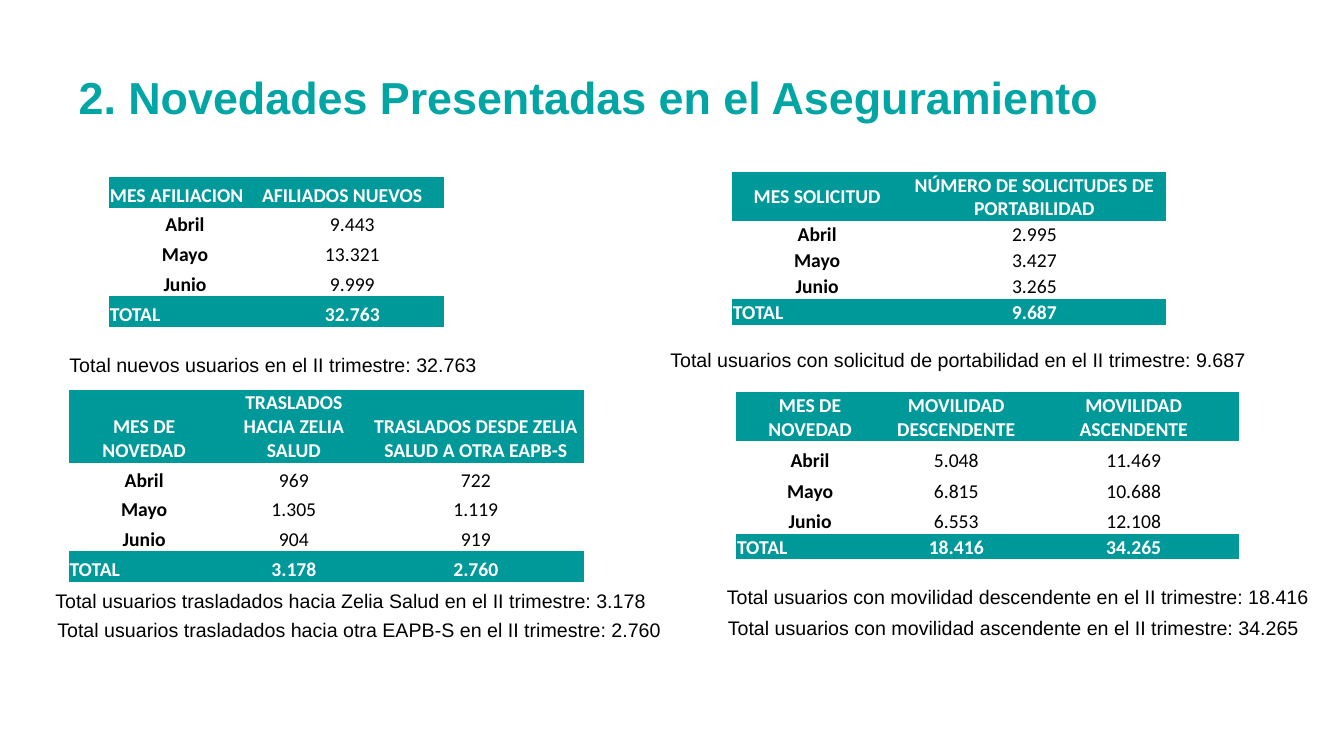
from pptx import Presentation
from pptx.dml.color import RGBColor
from pptx.enum.text import MSO_ANCHOR, MSO_AUTO_SIZE, PP_ALIGN
from pptx.oxml.ns import qn

PX = 9144  # 100 px per inch
SLIDE_WIDTH, SLIDE_HEIGHT = 1333, 750
LEFT, CENTER = PP_ALIGN.LEFT, PP_ALIGN.CENTER
BOTTOM, MIDDLE = MSO_ANCHOR.BOTTOM, MSO_ANCHOR.MIDDLE
NO_AUTOFIT = MSO_AUTO_SIZE.NONE
NO_STYLE_NO_GRID = "{2D5ABB26-0587-4C30-8999-92F81FD0307C}"
COLORS = {"title": "00A5A4", "band": "009999", "light": "FFFFFF", "dark": "000000"}
MONTHS = ["Abril", "Mayo", "Junio"]

# box, column widths, header and total heights, header anchor and alignment,
# header texts, then one list of month values and total for each number column
TABLES = [
    ((108, 176, 332, 148), [151, 181], 30, 30, BOTTOM, LEFT,
     ["MES AFILIACION", "AFILIADOS NUEVOS"],
     [["9.443", "13.321", "9.999", "32.763"]]),
    ((726, 171, 431, 151), [169, 262], 48, 26, MIDDLE, CENTER,
     ["MES SOLICITUD", "NÚMERO DE SOLICITUDES DE PORTABILIDAD"],
     [["2.995", "3.427", "3.265", "9.687"]]),
    ((68, 387, 511, 189), [150, 147, 214], 71, 30, BOTTOM, CENTER,
     ["MES DE NOVEDAD", "TRASLADOS HACIA ZELIA SALUD",
      "TRASLADOS DESDE ZELIA SALUD A OTRA EAPB-S"],
     [["969", "1.305", "904", "3.178"], ["722", "1.119", "919", "2.760"]]),
    ((730, 389, 499, 166), [147, 143, 209], 49, 25, BOTTOM, CENTER,
     ["MES DE NOVEDAD", "MOVILIDAD DESCENDENTE", "MOVILIDAD ASCENDENTE"],
     [["5.048", "6.815", "6.553", "18.416"], ["11.469", "10.688", "12.108", "34.265"]]),
]

CAPTIONS = [
    (59, 345, "Total nuevos usuarios en el II trimestre: 32.763"),
    (655, 340, "Total usuarios con solicitud de portabilidad en el II trimestre: 9.687"),
    (45, 579, "Total usuarios trasladados hacia Zelia Salud en el II trimestre: 3.178"),
    (47, 608, "Total usuarios trasladados hacia otra EAPB-S en el II trimestre: 2.760"),
    (711, 575, "Total usuarios con movilidad descendente en el II trimestre: 18.416"),
    (712, 606, "Total usuarios con movilidad ascendente en el II trimestre: 34.265"),
]


def emu(*lengths):
    return [round(length * PX) for length in lengths]


def write(text_frame, text, size, font_name, color, bold=False, alignment=LEFT):
    text_frame.text = text
    paragraph = text_frame.paragraphs[0]
    paragraph.alignment = alignment
    font = paragraph.runs[0].font
    font.size = size * 12700
    font.name = font_name
    font.bold = bold
    font.color.rgb = RGBColor.from_string(COLORS[color])


def set_title(slide, text):
    title = slide.shapes.title
    title.left, title.top, title.width, title.height = emu(68, 64, 1213, 64)
    title.text_frame.auto_size = NO_AUTOFIT
    write(title.text_frame, text, 32, "Arial", "title", bold=True)


def add_caption(slide, left, top, text):
    width = min(676, SLIDE_WIDTH - left)
    caption = slide.shapes.add_textbox(*emu(left, top, width, 34))
    caption.text_frame.word_wrap = True
    write(caption.text_frame, text, 14, "Arial", "dark")


def fill_cell(cell, text, banded, bold, alignment, anchor):
    cell.margin_left, cell.margin_top, cell.margin_right, cell.margin_bottom = emu(1, 1, 1, 0)
    cell.vertical_anchor = anchor
    if banded:
        cell.fill.solid()
        cell.fill.fore_color.rgb = RGBColor.from_string(COLORS["band"])
    else:
        cell.fill.background()
    write(cell.text_frame, text, 14, "Calibri", "light" if banded else "dark", bold, alignment)


def add_month_table(slide, box, widths, header_height, total_height,
                    header_anchor, header_alignment, headers, series):
    """Add a table with a coloured header, one row per month and a coloured total."""
    rows = [headers, *zip(MONTHS + ["TOTAL"], *series)]
    last = len(rows) - 1
    table = slide.shapes.add_table(len(rows), len(widths), *emu(*box)).table
    table.first_row = table.horz_banding = False
    table._tbl.tblPr.find(qn("a:tableStyleId")).text = NO_STYLE_NO_GRID

    for column, width in zip(table.columns, emu(*widths)):
        column.width = width
    month_height = (box[3] - header_height - total_height) / len(MONTHS)
    heights = [header_height] + [month_height] * len(MONTHS) + [total_height]
    for row, height in zip(table.rows, emu(*heights)):
        row.height = height

    for r, texts in enumerate(rows):
        banded = r in (0, last)
        anchor = header_anchor if r == 0 else BOTTOM
        for c, text in enumerate(texts):
            if r == 0:
                alignment = header_alignment
            else:
                alignment = LEFT if r == last and c == 0 else CENTER
            fill_cell(table.cell(r, c), text, banded, banded or c == 0, alignment, anchor)


def main():
    deck = Presentation()
    deck.slide_width, deck.slide_height = emu(SLIDE_WIDTH, SLIDE_HEIGHT)
    slide = deck.slides.add_slide(deck.slide_layouts[5])
    set_title(slide, "2. Novedades Presentadas en el Aseguramiento")
    for month_table in TABLES:
        add_month_table(slide, *month_table)
    for caption in CAPTIONS:
        add_caption(slide, *caption)
    deck.save("out.pptx")


if __name__ == "__main__":
    main()
